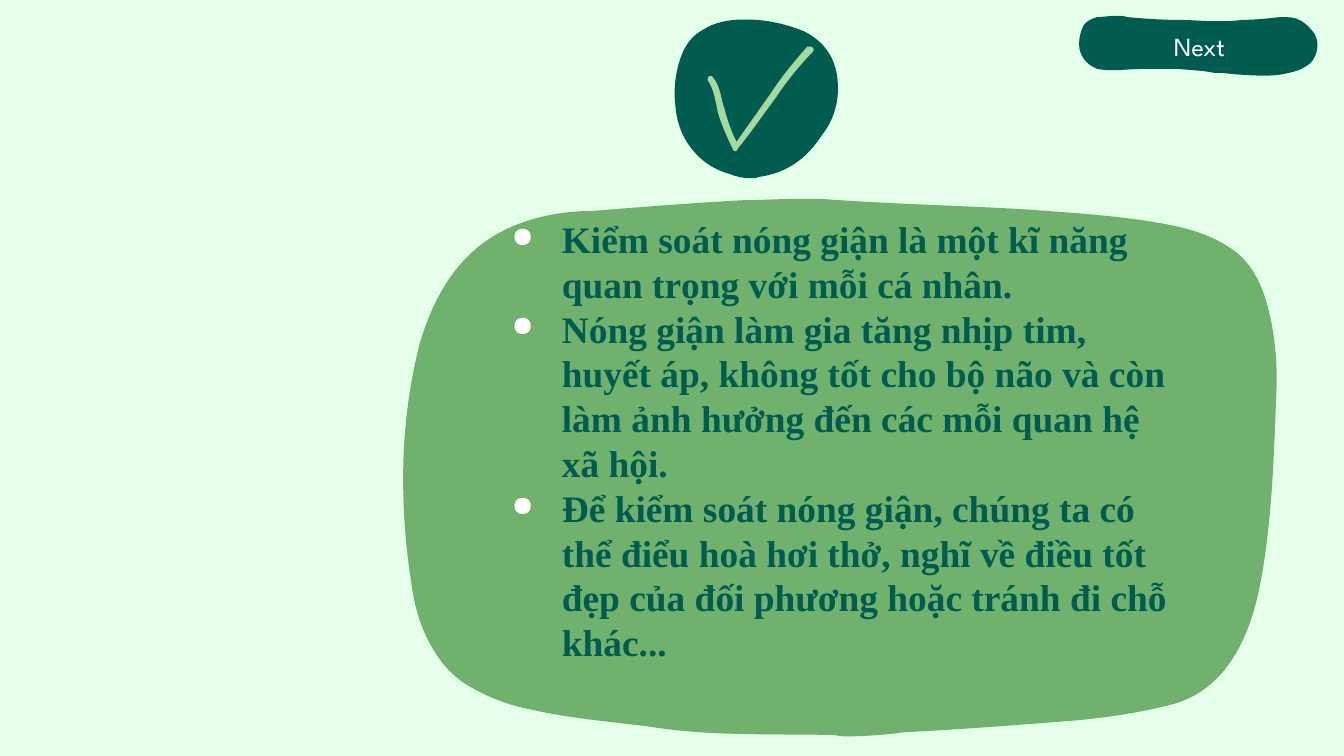
from dataclasses import dataclass

from lxml.etree import SubElement
from pptx import Presentation
from pptx.dml.color import RGBColor
from pptx.enum.text import MSO_ANCHOR, PP_ALIGN
from pptx.oxml.ns import qn
from pptx.util import Cm, Pt


@dataclass(frozen=True)
class Theme:
    mint: str = "E5FFEB"
    leaf: str = "70B16D"
    lime: str = "A4DAA1"
    forest: str = "005C4F"
    white: str = "FFFFFF"
    body_font: str = "Times New Roman"
    button_font: str = "League Spartan"
    body_size: int = 20
    body_leading: int = 24
    button_size: int = 14


THEME = Theme()

PANEL = (
    (628, 548),
    (643, 548, 658, 547, 672, 545), (712, 543, 751, 540, 790, 537),
    (818, 535, 846, 531, 873, 524), (908, 514, 929, 482, 938, 433),
    (947, 385, 948, 335, 950, 284), (950, 270, 949, 255, 946, 240),
    (941, 214, 932, 194, 913, 183), (902, 176, 890, 172, 878, 169),
    (842, 161, 805, 159, 766, 156), (716, 153, 664, 152, 611, 148),
    (605, 148, 600, 148, 594, 148), (580, 148, 567, 149, 553, 149),
    (516, 151, 478, 154, 441, 157), (422, 157, 403, 160, 385, 167),
    (351, 180, 326, 208, 312, 257), (304, 289, 300, 322, 300, 356),
    (300, 382, 302, 408, 306, 433), (310, 468, 326, 497, 348, 510),
    (363, 519, 379, 525, 395, 528), (425, 535, 455, 537, 485, 541),
    (529, 548, 574, 546, 619, 547), (622, 547, 625, 548, 628, 548),
)
BADGE = (
    (553, 15),
    (542, 15, 531, 17, 522, 23), (516, 26, 511, 32, 508, 38),
    (502, 51, 500, 66, 502, 81), (504, 104, 520, 124, 543, 130),
    (548, 132, 553, 133, 558, 133), (561, 133, 563, 133, 565, 132),
    (586, 129, 601, 118, 612, 101), (621, 90, 625, 76, 624, 62),
    (623, 45, 615, 32, 599, 24), (597, 23, 594, 22, 591, 21),
    (579, 17, 567, 15, 555, 15), (554, 15, 554, 15, 553, 15),
)
TICK = (
    (604, 35),
    (603, 35, 603, 35, 602, 35), (592, 46, 582, 58, 574, 70),
    (548, 106), (544, 98, 541, 90, 539, 82),
    (536, 74, 536, 65, 530, 58), (530, 57, 529, 57, 528, 57),
    (527, 57, 525, 58, 526, 60), (531, 67, 532, 76, 534, 85),
    (537, 94, 541, 103, 545, 111), (545, 112, 546, 113, 547, 113),
    (548, 113, 549, 112, 549, 111), (559, 99, 568, 86, 578, 73),
    (586, 61, 596, 49, 606, 39), (608, 37, 606, 35, 604, 35),
)
BUTTON = (
    (830, 12),
    (825, 12, 820, 13, 816, 13), (812, 14, 808, 16, 806, 19),
    (803, 25, 802, 31, 803, 37), (805, 44, 809, 48, 816, 51),
    (820, 52, 825, 52, 829, 52), (830, 52, 832, 52, 833, 52),
    (844, 51, 856, 51, 867, 51), (870, 51, 873, 51, 876, 51),
    (885, 52, 894, 52, 904, 54), (905, 54, 907, 54, 909, 54),
    (919, 55, 930, 56, 940, 56), (941, 56, 942, 56, 943, 56),
    (950, 56, 957, 55, 964, 53), (968, 52, 972, 50, 976, 47),
    (982, 41, 983, 31, 979, 25), (973, 17, 967, 13, 958, 13),
    (956, 13, 955, 13, 953, 13), (944, 14, 934, 15, 925, 15),
    (918, 16, 911, 16, 905, 16), (896, 16, 886, 15, 877, 15),
    (864, 15, 851, 14, 839, 13), (836, 12, 833, 12, 830, 12),
)
POINTS = (
    "Kiểm soát nóng giận là một kĩ năng quan trọng với mỗi cá nhân.",
    "Nóng giận làm gia tăng nhịp tim, huyết áp, không tốt cho bộ não và còn "
    "làm ảnh hưởng đến các mỗi quan hệ xã hội.",
    "Để kiểm soát nóng giận, chúng ta có thể điểu hoà hơi thở, nghĩ về điều "
    "tốt đẹp của đối phương hoặc tránh đi chỗ khác...",
)


def color(value):
    return RGBColor.from_string(value)


def bend(s, outline):
    lines = iter(list(s._element.iter(qn("a:lnTo"))))
    for segment in outline[1:]:
        group = [next(lines) for _ in range(len(segment) // 2)]
        if len(group) == 3:
            curve = group[0].makeelement(qn("a:cubicBezTo"))
            group[0].addprevious(curve)
            for line in group:
                curve.append(line[0])
                line.getparent().remove(line)


def add_blob(shapes, outline, box, fill):
    x, y, w, h = box
    points = [segment[i:i + 2] for segment in outline
              for i in range(0, len(segment), 2)]
    xs, ys = zip(*points)
    kx, ky = w / (max(xs) - min(xs)), h / (max(ys) - min(ys))
    fitted = [(Cm(x + (px - min(xs)) * kx), Cm(y + (py - min(ys)) * ky))
              for px, py in points]
    builder = shapes.build_freeform(*fitted[0])
    builder.add_line_segments(fitted[1:], close=True)
    s = builder.convert_to_shape()
    bend(s, outline)
    s.shadow.inherit = False
    s.fill.solid()
    s.fill.fore_color.rgb = color(fill)
    s.line.fill.background()


def add_text(shapes, box):
    tf = shapes.add_textbox(*map(Cm, box)).text_frame
    tf.word_wrap = True
    tf.vertical_anchor = MSO_ANCHOR.MIDDLE
    for side in ("left", "top", "right", "bottom"):
        setattr(tf, f"margin_{side}", Cm(0.25))
    return tf


def style_run(r, font, size, fill, bold=False):
    r.font.name = font
    r.font.size = Pt(size)
    r.font.bold = bold
    r.font.color.rgb = color(fill)


def add_bullet(p):
    pPr = p._p.get_or_add_pPr()
    pPr.set("marL", str(Cm(1.27)))
    pPr.set("indent", str(Cm(-0.95)))
    bullet_color = SubElement(pPr, qn("a:buClr"))
    SubElement(bullet_color, qn("a:srgbClr"), val=THEME.white)
    SubElement(pPr, qn("a:buSzPct"), val="75000")
    SubElement(pPr, qn("a:buChar"), char="●")


def add_panel(shapes, box):
    x, y, w, h = box
    add_blob(shapes, PANEL, box, THEME.leaf)
    tf = add_text(shapes, (x + 1.48, y + 0.84, w - 2.97, h - 2.72))
    tf.text = "\n".join(POINTS)
    for p in tf.paragraphs:
        add_bullet(p)
        p.line_spacing = Pt(THEME.body_leading)
        style_run(p.runs[0], THEME.body_font, THEME.body_size, THEME.forest, True)


def add_badge(shapes, box):
    x, y, w, h = box
    group = shapes.add_group_shape()
    add_blob(group.shapes, BADGE, box, THEME.forest)
    add_blob(group.shapes, TICK, (x + 0.63, y + 0.51, w - 1.08, h - 1.02), THEME.lime)


def add_button(shapes, box):
    x, y, w, h = box
    add_blob(shapes, BUTTON, box, THEME.forest)
    tf = add_text(shapes, (x + 0.38, y + 0.05, w - 0.74, h - 0.08))
    tf.text = "Next"
    p = tf.paragraphs[0]
    p.alignment = PP_ALIGN.CENTER
    style_run(p.runs[0], THEME.button_font, THEME.button_size, THEME.white)


def main():
    prs = Presentation()
    prs.slide_width, prs.slide_height = Cm(25.4), Cm(14.29)
    slide = prs.slides.add_slide(prs.slide_layouts[6])
    slide.background.fill.solid()
    slide.background.fill.fore_color.rgb = color(THEME.mint)
    add_panel(slide.shapes, (7.62, 3.76, 16.51, 10.16))
    add_badge(slide.shapes, (12.72, 0.37, 3.14, 3))
    add_button(slide.shapes, (20.38, 0.3, 4.56, 1.13))
    prs.save("out.pptx")


if __name__ == "__main__":
    main()
